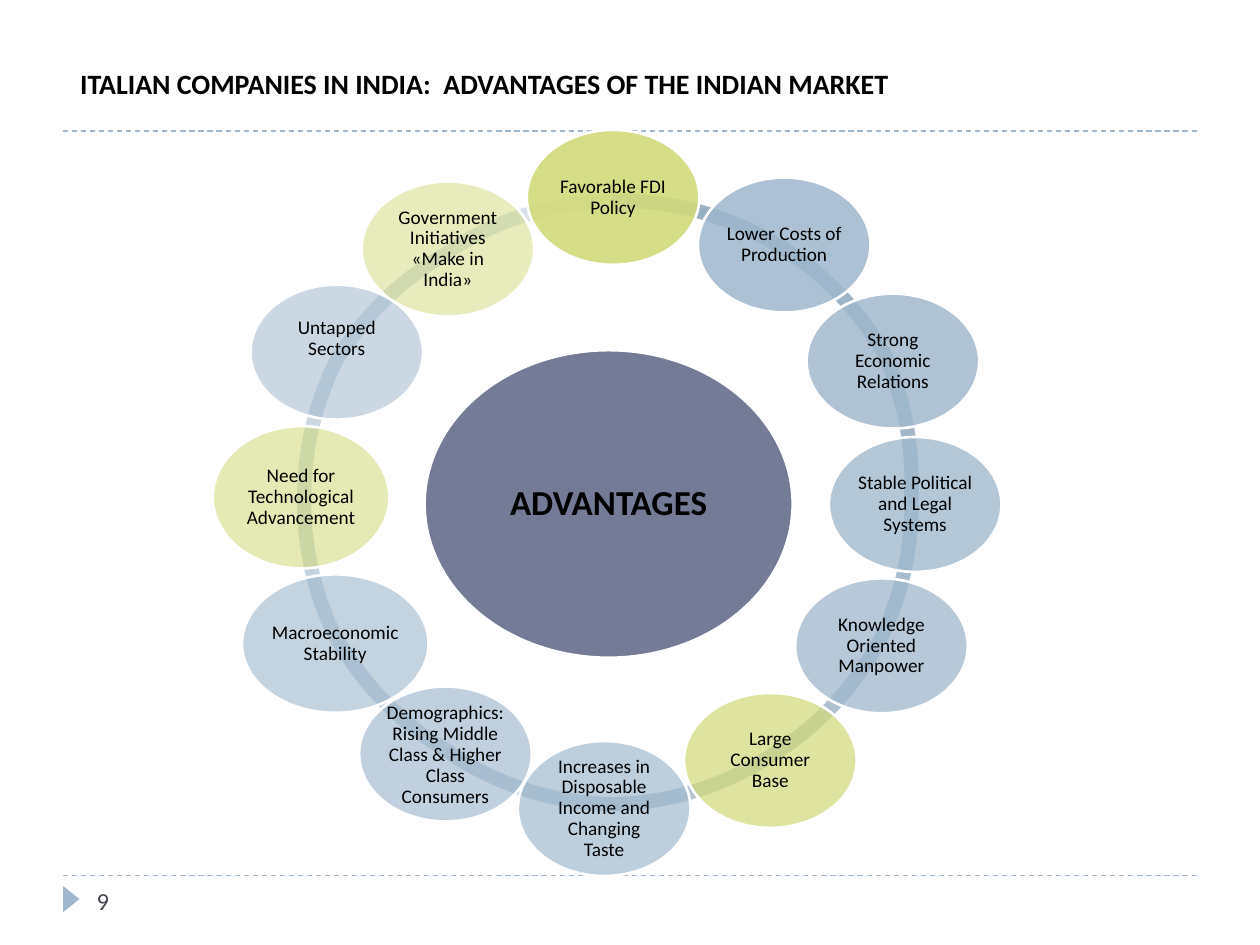
from dataclasses import dataclass

from pptx import Presentation
from pptx.dml.color import RGBColor
from pptx.enum.dml import MSO_LINE_DASH_STYLE as Dash
from pptx.enum.shapes import MSO_CONNECTOR as Connector, MSO_SHAPE as Preset
from pptx.enum.text import MSO_ANCHOR as Anchor, MSO_AUTO_SIZE as AutoSize, PP_ALIGN as Align
from pptx.oxml.ns import qn
from pptx.util import Cm, Pt
from lxml.etree import SubElement

COLORS = {
    "blue": "9FB8CD", "green": "D2DA7A", "core": "525B7E", "white": "FFFFFF",
    "black": "000000", "number": "464653", "ring_start": "D6E0E8", "ring_end": "98B0C4",
}
RING_SIZE = 12.5
RING_THICKNESS = 0.023


@dataclass
class Bubble:
    text: str
    left: float
    top: float
    color: str = "blue"
    width: float = 3.48
    height: float = 2.72
    inset: float = 0.05
    bottom_inset: float = 0.05
    size: int = 11
    bold: bool = False


@dataclass
class Arc:
    left: float
    top: float
    start: float  # degrees
    end: float


CORE = Bubble("ADVANTAGES", 8.56, 7.06, "core", 7.42, 6.2, size=20, bold=True)

# Clockwise from the top
BUBBLES = [
    Bubble("Favorable FDI Policy", 10.62, 2.62, "green"),
    Bubble("Lower Costs of Production", 14.07, 3.58),
    Bubble("Strong Economic Relations", 16.26, 5.92),
    Bubble("Stable Political and Legal Systems", 16.71, 8.81),
    Bubble("Knowledge Oriented Manpower", 16.03, 11.66),
    Bubble("Large Consumer Base", 13.79, 13.97, "green"),
    Bubble("Increases in Disposable Income and Changing Taste", 10.44, 14.94),
    Bubble("Demographics: Rising Middle Class & Higher Class Consumers", 7.24, 13.84,
           inset=0, bottom_inset=0),
    Bubble("Macroeconomic Stability", 4.88, 11.58, width=3.76, height=2.79, inset=0),
    Bubble("Need for Technological Advancement", 4.29, 8.59, "green", 3.56, 2.87),
    Bubble("Untapped Sectors", 5.05, 5.74, bottom_inset=0.6),
    Bubble("Government Initiatives «Make in India»", 7.29, 3.66, "green"),
]

# Counter-clockwise from the top, light to dark
ARCS = [
    Arc(6.17, 3.91, 236.64, 269.37), Arc(5.77, 4.17, 212.3, 240.96),
    Arc(5.99, 3.76, 179.93, 207.95), Arc(5.99, 3.89, 152.76, 181.17),
    Arc(5.87, 3.63, 120.73, 150.16), Arc(6.22, 3.86, 92.78, 124.65),
    Arc(5.97, 3.86, 57.6, 90.38), Arc(6.1, 3.78, 28.91, 59.11),
    Arc(6.02, 3.94, 359.72, 27.11), Arc(6.02, 3.43, 337.02, 4.5),
    Arc(6.27, 3.91, 302.0, 331.97), Arc(6.25, 3.91, 268.57, 302.15),
]


def rgb(name: str) -> RGBColor:
    return RGBColor.from_string(COLORS[name])


def assign(target, **values) -> None:
    for name, value in values.items():
        setattr(target, name, value)


def blend(first: RGBColor, last: RGBColor, share: float) -> RGBColor:
    return RGBColor(*(round(a + (b - a) * share) for a, b in zip(first, last)))


def write(frame, text: str, size: int, color: str, bold: bool = False, **para_format):
    para = frame.paragraphs[0]
    assign(para, **para_format)
    span = para.add_run()
    span.text = text
    assign(span.font, name="Calibri", size=Pt(size), bold=bold)
    span.font.color.rgb = rgb(color)
    return para


def add_plain(page, preset, left: float, top: float, width: float, height: float,
              color: RGBColor):
    shape = page.shapes.add_shape(preset, Cm(left), Cm(top), Cm(width), Cm(height))
    shape.shadow.inherit = False
    shape.fill.solid()
    shape.fill.fore_color.rgb = color
    shape.line.fill.background()
    return shape


def add_rule(page, top: float) -> None:
    rule = page.shapes.add_connector(Connector.STRAIGHT, Cm(1.27), Cm(top), Cm(24.13), Cm(top))
    rule.line.color.rgb = rgb("blue")
    assign(rule.line, width=Pt(0.75), dash_style=Dash.DASH)
    SubElement(rule._element.spPr, qn("a:effectLst"))


def add_arc(page, arc: Arc, color: RGBColor) -> None:
    shape = add_plain(page, Preset.BLOCK_ARC, arc.left, arc.top, RING_SIZE, RING_SIZE, color)
    # Angles are stored in 60000ths of a degree, adjustments in 100000ths
    for index, value in enumerate((arc.start * 0.6, arc.end * 0.6, RING_THICKNESS)):
        shape.adjustments[index] = value


def add_bubble(page, bubble: Bubble, opacity: float) -> None:
    shape = add_plain(page, Preset.OVAL, bubble.left, bubble.top, bubble.width,
                      bubble.height, rgb(bubble.color))
    fill_color = shape._element.spPr.find(qn("a:solidFill"))[0]
    SubElement(fill_color, qn("a:alpha"), val=str(round(opacity * 1000)))
    shape.line.color.rgb = rgb("white")
    shape.line.width = Pt(1.5)
    side = Cm(bubble.inset)
    assign(shape.text_frame, word_wrap=True, vertical_anchor=Anchor.MIDDLE,
           margin_left=side, margin_right=side, margin_top=Cm(0.05),
           margin_bottom=Cm(bubble.bottom_inset))
    write(shape.text_frame, bubble.text, bubble.size, "black", bubble.bold,
          alignment=Align.CENTER, line_spacing=0.9)


def main() -> None:
    deck = Presentation()
    assign(deck, slide_width=Cm(25.4), slide_height=Cm(19.05))
    page = deck.slides.add_slide(deck.slide_layouts[5])

    # Rules and footer
    for top in (17.65, 2.64):
        add_rule(page, top)
    marker = add_plain(page, Preset.ISOSCELES_TRIANGLE, 1.17, 17.96, 0.53, 0.33, rgb("blue"))
    marker.rotation = 90
    number = page.shapes.add_textbox(Cm(1.7), Cm(17.65), Cm(5.51), Cm(1.02)).text_frame
    assign(number, word_wrap=True, vertical_anchor=Anchor.MIDDLE)
    write(number, "9", 14, "number")

    # Title
    title = page.shapes.title
    assign(title, left=Cm(1.24), top=Cm(0.23), width=Cm(22.28), height=Cm(2.74))
    assign(title.text_frame, word_wrap=True, auto_size=AutoSize.NONE,
           vertical_anchor=Anchor.MIDDLE)
    para = write(title.text_frame, "ITALIAN COMPANIES IN INDIA:  ADVANTAGES OF THE INDIAN MARKET",
                 16, "black", True, alignment=Align.LEFT, line_spacing=Pt(24))
    para._p.get_or_add_pPr().set("marL", str(Cm(0.12)))

    # Ring
    for index, arc in enumerate(ARCS):
        share = index / (len(ARCS) - 1)
        add_arc(page, arc, blend(rgb("ring_start"), rgb("ring_end"), share))

    # Centre and bubbles, fading from 90 to 50 percent
    add_bubble(page, CORE, 80)
    for index, bubble in enumerate(BUBBLES):
        add_bubble(page, bubble, 90 - 40 * index / (len(BUBBLES) - 1))

    deck.save("out.pptx")


if __name__ == "__main__":
    main()
